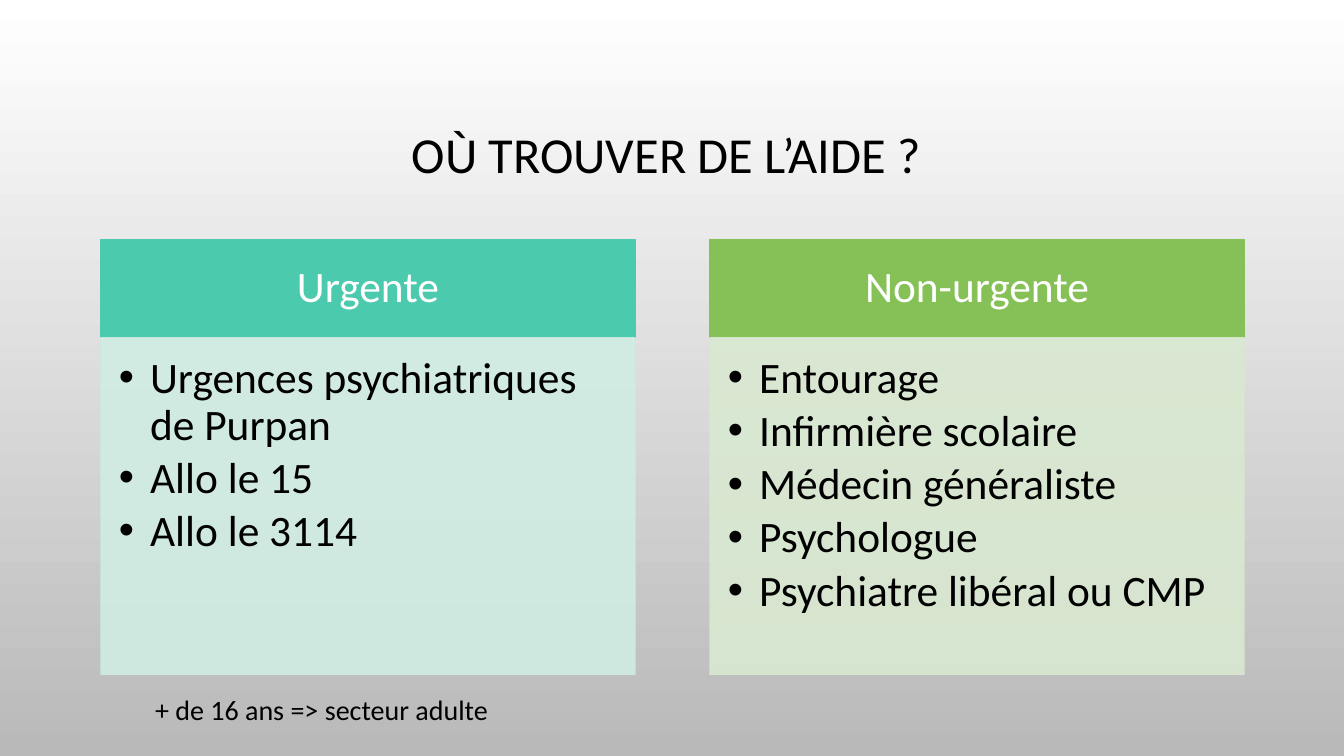
import pptx
import pptx.dml.color
import pptx.enum.dml
import pptx.enum.shapes
import pptx.enum.text
import pptx.oxml.ns
import pptx.util
from dataclasses import dataclass
from lxml import etree

TITLE = "OÙ TROUVER DE L’AIDE ? "
COLUMNS = [
    {"heading": "Urgente", "header_fill": "4BCAAD", "body_fill": "D0ECE3",
     "items": ["Urgences psychiatriques de Purpan", "Allo le 15", "Allo le 3114"]},
    {"heading": "Non-urgente", "header_fill": "86C157", "body_fill": "D9E9D1",
     "items": ["Entourage", "Infirmière scolaire", "Médecin généraliste",
               "Psychologue", "Psychiatre libéral ou CMP"]},
]
FOOTNOTE = "+ de 16 ans => secteur adulte"


@dataclass(frozen=True)
class Theme:
    font: str = "Calibri"
    dark: str = "000000"
    light: str = "FFFFFF"
    background: tuple = ("FFFFFF", "B9B9B9")
    title_size: int = 36
    column_size: int = 31
    footnote_size: int = 20
    line_width: float = 0.75
    body_opacity: int = 90


THEME = Theme()
EMU_PER_PX = 9144  # 100 px to the inch

SLIDE_SIZE = (1333, 750)
TITLE_BOX = (100, 68, 1133, 175)
FOOTNOTE_BOX = (144, 682, 384, 44)
COLUMN_LEFT, COLUMN_TOP = 100, 238
COLUMN_WIDTH, COLUMN_STEP = 530, 604
HEADER_HEIGHT, BODY_HEIGHT = 97, 334
BULLET_INDENT = 31

ALIGN = pptx.enum.text.PP_ALIGN
ANCHOR = pptx.enum.text.MSO_ANCHOR


def px(length):
    return pptx.util.Emu(length * EMU_PER_PX)


def rgb(code):
    return pptx.dml.color.RGBColor.from_string(code)


def add_bullet(paragraph):
    properties = paragraph._p.get_or_add_pPr()
    properties.set("marL", str(px(BULLET_INDENT)))
    properties.set("indent", str(-px(BULLET_INDENT)))
    for tag, name, value in (("a:buFont", "typeface", "Arial"), ("a:buChar", "char", "•")):
        etree.SubElement(properties, pptx.oxml.ns.qn(tag)).set(name, value)


def write_text(shape, lines, size, color=THEME.dark, align=ALIGN.LEFT, anchor=ANCHOR.TOP,
               insets=(10, 5, 10, 5), line_spacing=1.0, space_after=0, bulleted=False):
    frame = shape.text_frame
    frame.word_wrap = True
    frame.vertical_anchor = anchor
    frame.margin_left, frame.margin_top, frame.margin_right, frame.margin_bottom = map(px, insets)
    for index, line in enumerate(lines):
        paragraph = frame.add_paragraph() if index else frame.paragraphs[0]
        if bulleted:
            add_bullet(paragraph)
        paragraph.alignment = align
        paragraph.line_spacing = line_spacing
        paragraph.space_after = pptx.util.Pt(space_after)
        run = paragraph.add_run()
        run.text = line
        run.font.name = THEME.font
        run.font.size = pptx.util.Pt(size)
        run.font.color.rgb = rgb(color)


def add_panel(slide, box, color, opacity=100):
    shape = slide.shapes.add_shape(pptx.enum.shapes.MSO_SHAPE.RECTANGLE, *map(px, box))
    shape.shadow.inherit = False
    shape.fill.solid()
    shape.fill.fore_color.rgb = rgb(color)
    shape.line.color.rgb = rgb(color)
    shape.line.width = pptx.util.Pt(THEME.line_width)
    if opacity < 100:
        for node in shape._element.spPr.iter(pptx.oxml.ns.qn("a:srgbClr")):
            etree.SubElement(node, pptx.oxml.ns.qn("a:alpha")).set("val", str(opacity * 1000))
    return shape


def add_column(slide, column, left):
    header = add_panel(slide, (left, COLUMN_TOP, COLUMN_WIDTH, HEADER_HEIGHT),
                       column["header_fill"])
    write_text(header, [column["heading"]], THEME.column_size, color=THEME.light,
               align=ALIGN.CENTER, anchor=ANCHOR.MIDDLE, insets=(24, 14, 24, 14),
               line_spacing=0.9)
    body = add_panel(slide, (left, COLUMN_TOP + HEADER_HEIGHT, COLUMN_WIDTH, BODY_HEIGHT),
                     column["body_fill"], opacity=THEME.body_opacity)
    write_text(body, column["items"], THEME.column_size, insets=(18, 18, 24, 27),
               line_spacing=0.9, space_after=4.5, bulleted=True)


def paint_background(slide):
    fill = slide.background.fill
    fill.gradient()
    fill.gradient_angle = 270
    for stop, color, position in zip(fill.gradient_stops, THEME.background, (0, 1)):
        stop.color.rgb = rgb(color)
        stop.position = position


def main():
    presentation = pptx.Presentation()
    presentation.slide_width, presentation.slide_height = map(px, SLIDE_SIZE)
    slide = presentation.slides.add_slide(presentation.slide_layouts[6])
    paint_background(slide)

    title = slide.shapes.add_textbox(*map(px, TITLE_BOX))
    write_text(title, [TITLE], THEME.title_size, align=ALIGN.CENTER,
               anchor=ANCHOR.MIDDLE, line_spacing=0.9)
    for index, column in enumerate(COLUMNS):
        add_column(slide, column, COLUMN_LEFT + index * COLUMN_STEP)
    footnote = slide.shapes.add_textbox(*map(px, FOOTNOTE_BOX))
    write_text(footnote, [FOOTNOTE], THEME.footnote_size)

    presentation.save("out.pptx")


if __name__ == "__main__":
    main()
